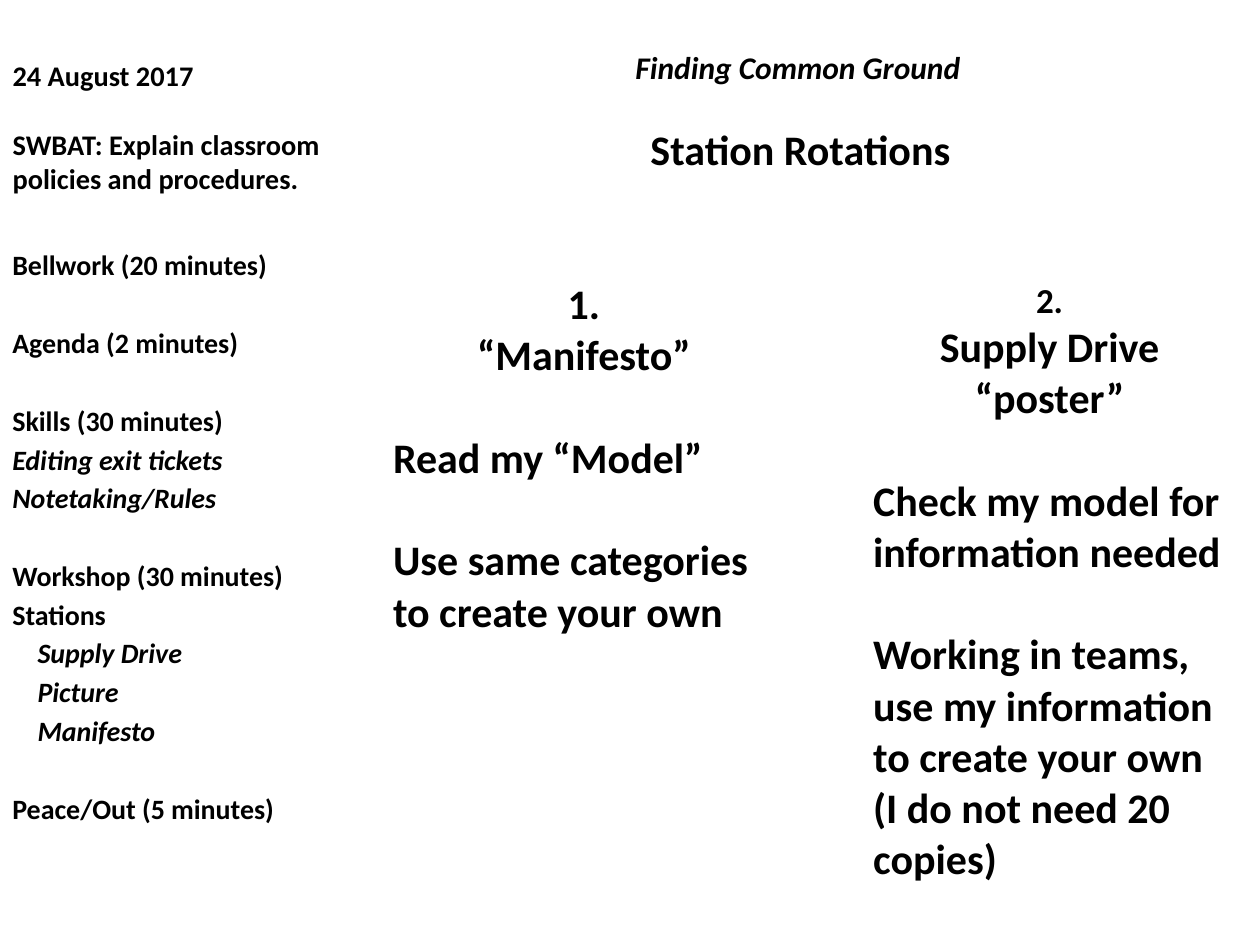
from dataclasses import dataclass

from lxml import etree
from pptx import Presentation
from pptx.dml.color import RGBColor
from pptx.enum.shapes import MSO_SHAPE
from pptx.enum.text import MSO_ANCHOR, PP_ALIGN
from pptx.oxml.ns import qn
from pptx.util import Pt

BLACK = RGBColor(0, 0, 0)
WHITE = RGBColor(255, 255, 255)
FONT = "Calibri"
LEFT, CENTER = PP_ALIGN.LEFT, PP_ALIGN.CENTER
TOP, BOTTOM = MSO_ANCHOR.TOP, MSO_ANCHOR.BOTTOM
RECTANGLE = MSO_SHAPE.RECTANGLE
TITLE_ONLY = 5

AGENDA_GAP = 2.9
SECTION_GAP = 25.3
STATION_GAP = 29.3


@dataclass
class Line:
    text: str
    size: float
    before: float = 0
    align: PP_ALIGN = LEFT
    italic: bool = False
    indent: float = 0


@dataclass
class Box:
    left: float
    top: float
    width: float
    height: float

    def lengths(self) -> tuple:
        return Pt(self.left), Pt(self.top), Pt(self.width), Pt(self.height)


def agenda_item(text: str, before: float = AGENDA_GAP, italic: bool = False,
                indent: float = 0) -> Line:
    return Line(text, 16, before, LEFT, italic, indent)


HEADING = [
    Line("24 August 2017", 16.2),
    Line("SWBAT: Explain classroom policies and procedures.", 16.2, 19.8),
]
AGENDA = [
    agenda_item("Bellwork (20 minutes)", 0),
    agenda_item("Agenda (2 minutes)", SECTION_GAP),
    agenda_item("Skills (30 minutes)", SECTION_GAP),
    agenda_item("Editing exit tickets", italic=True),
    agenda_item("Notetaking/Rules", italic=True),
    agenda_item("Workshop (30 minutes)", SECTION_GAP),
    agenda_item("Stations"),
    *[agenda_item(station, italic=True, indent=14.4)
      for station in ("Supply Drive", "Picture", "Manifesto")],
    agenda_item("Peace/Out (5 minutes)", SECTION_GAP),
]
MANIFESTO = [
    Line("1.", 24, align=CENTER),
    Line("“Manifesto”", 24, align=CENTER),
    Line("Read my “Model”", 24, STATION_GAP),
    Line("Use same categories to create your own", 24, STATION_GAP),
]
SUPPLY_DRIVE = [
    Line("2.", 20, align=CENTER),
    Line("Supply Drive “poster”", 24, align=CENTER),
    Line("Check my model for information needed", 24, STATION_GAP),
    Line("Working in teams, use my information to create your own", 24, STATION_GAP),
    Line("(I do not need 20 copies)", 24),
]
STATION_COLUMNS = [(232.6, MANIFESTO), (41.8, []), (216, SUPPLY_DRIVE)]


def write_lines(text_frame, lines: list[Line]) -> None:
    text_frame.word_wrap = True
    text_frame.text = "\n".join(line.text for line in lines)
    for paragraph, line in zip(text_frame.paragraphs, lines):
        paragraph.alignment = line.align
        paragraph.space_before = Pt(line.before)
        paragraph.line_spacing = 1.0
        if line.indent:
            paragraph._p.get_or_add_pPr().set("marL", str(Pt(line.indent)))
        for run in paragraph.runs:
            font = run.font
            font.name = FONT
            font.size = Pt(line.size)
            font.bold = True
            font.italic = line.italic
            font.color.rgb = BLACK


def add_text(slide, box: Box, lines: list[Line]):
    text_box = slide.shapes.add_textbox(*box.lengths())
    write_lines(text_box.text_frame, lines)
    return text_box


def border_cell(cell) -> None:
    properties = cell._tc.get_or_add_tcPr()
    for position, (side, width) in enumerate(
            [("lnL", 1), ("lnR", 1), ("lnT", 1), ("lnB", 3)]):
        border = etree.Element(qn(f"a:{side}"), w=str(Pt(width)))
        fill = etree.SubElement(border, qn("a:solidFill"))
        etree.SubElement(fill, qn("a:srgbClr"), val=str(WHITE))
        properties.insert(position, border)


def add_stations(slide, box: Box) -> None:
    frame = slide.shapes.add_table(1, len(STATION_COLUMNS), *box.lengths())
    table = frame.table
    table.first_row = False
    table.horz_banding = False
    for index, (width, lines) in enumerate(STATION_COLUMNS):
        table.columns[index].width = Pt(width)
        cell = table.cell(0, index)
        cell.fill.background()
        border_cell(cell)
        if lines:
            write_lines(cell.text_frame, lines)


def main() -> None:
    presentation = Presentation()
    presentation.slide_width = Pt(720)
    presentation.slide_height = Pt(540)
    slide = presentation.slides.add_slide(presentation.slide_layouts[TITLE_ONLY])

    title = slide.shapes.title
    title.left, title.top, title.width, title.height = Box(0, 0, 204, 134.6).lengths()
    write_lines(title.text_frame, HEADING)
    title.text_frame.vertical_anchor = BOTTOM
    title.text_frame.margin_bottom = Pt(23)

    theme = add_text(slide, Box(234, 24, 444, 458.6),
                     [Line("Finding Common Ground", 18, align=CENTER, italic=True)])
    theme.fill.solid()
    theme.fill.fore_color.rgb = WHITE

    add_text(slide, Box(0, 138, 188, 384), AGENDA)

    banner = slide.shapes.add_shape(RECTANGLE, *Box(235.4, 67, 444, 58.3).lengths())
    banner.shadow.inherit = False
    banner.fill.background()
    banner.line.color.rgb = WHITE
    banner.line.width = Pt(0.25)
    write_lines(banner.text_frame, [Line("Station Rotations", 24, align=CENTER)])
    banner.text_frame.vertical_anchor = TOP

    add_stations(slide, Box(217.4, 156.2, 490.4, 348))
    presentation.save("out.pptx")


if __name__ == "__main__":
    main()
